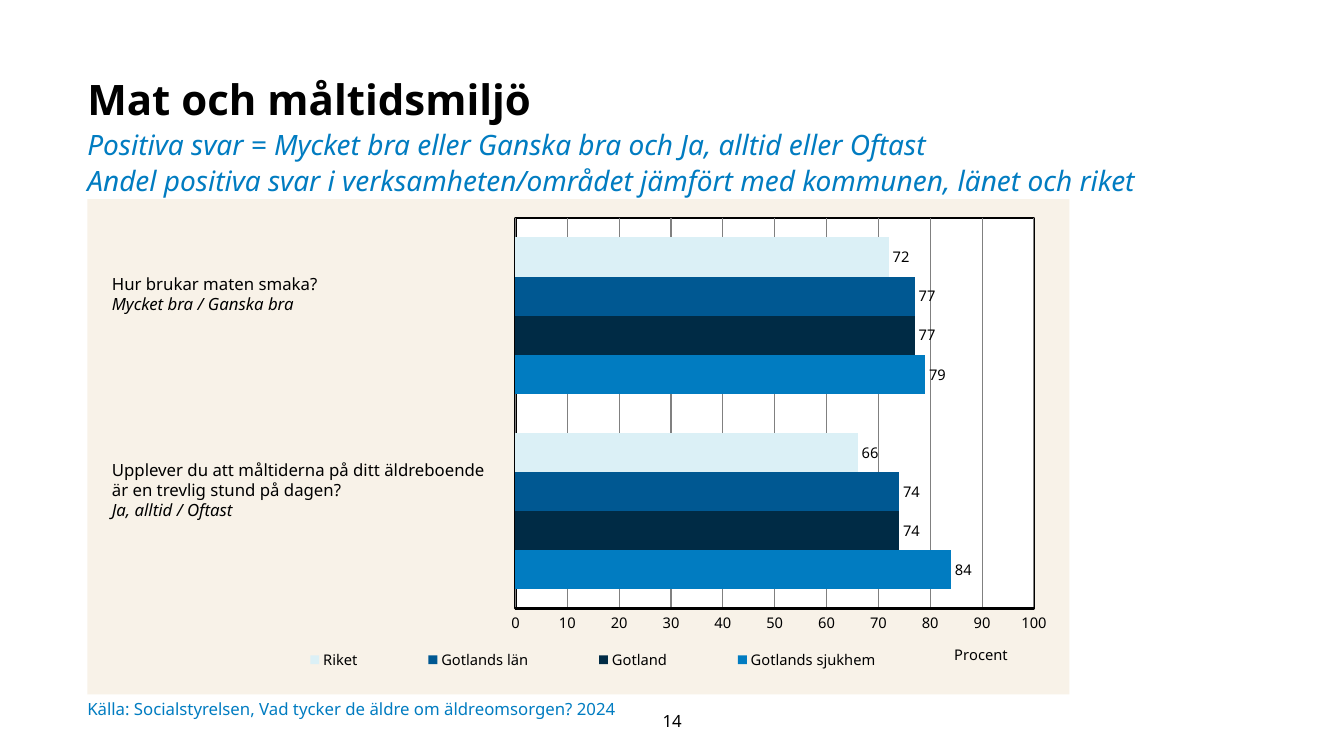
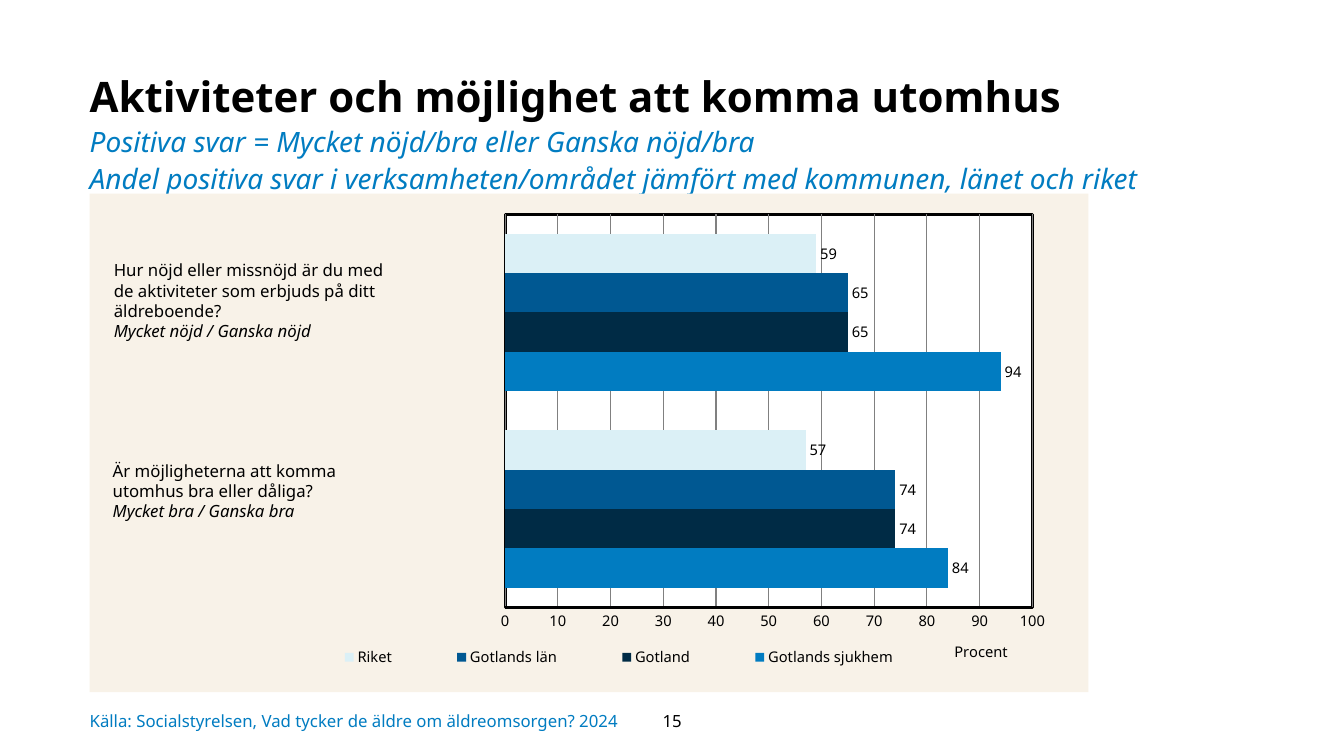
from dataclasses import dataclass

from copy import deepcopy
from lxml.etree import SubElement
from pptx import Presentation
from pptx.chart.axis import ValueAxis
from pptx.chart.chart import Chart
from pptx.chart.data import CategoryChartData
from pptx.dml.color import RGBColor
from pptx.enum.chart import XL_CHART_TYPE, XL_LABEL_POSITION, XL_LEGEND_POSITION, XL_TICK_MARK
from pptx.enum.text import MSO_ANCHOR, MSO_AUTO_SIZE, PP_ALIGN
from pptx.oxml import parse_xml
from pptx.oxml.ns import nsdecls, qn
from pptx.oxml.xmlchemy import BaseOxmlElement
from pptx.presentation import Presentation as Deck
from pptx.slide import Slide
from pptx.text.text import TextFrame, _Paragraph as Paragraph
from pptx.util import Cm, Pt

FONT = "Noto Sans"
BLACK = RGBColor(0x00, 0x00, 0x00)
WHITE = RGBColor(0xFF, 0xFF, 0xFF)
GREY = RGBColor(0x80, 0x80, 0x80)
CREAM = RGBColor(0xF8, 0xF2, 0xE8)
BLUE = RGBColor(0x01, 0x7C, 0xC1)
NAVY = RGBColor(0x00, 0x2B, 0x45)
ROYAL = RGBColor(0x00, 0x58, 0x92)
ICE = RGBColor(0xDB, 0xF0, 0xF6)

SERIES_COLORS = {"Gotlands sjukhem": BLUE, "Gotland": NAVY, "Gotlands län": ROYAL, "Riket": ICE}
COMPARISON = "Andel positiva svar i verksamheten/området jämfört med kommunen, länet och riket"
SOURCE = "Källa: Socialstyrelsen, Vad tycker de äldre om äldreomsorgen? 2024"


@dataclass(frozen=True)
class Box:
    left: float
    top: float
    width: float
    height: float

    def lengths(self) -> tuple[Cm, Cm, Cm, Cm]:
        return Cm(self.left), Cm(self.top), Cm(self.width), Cm(self.height)


@dataclass(frozen=True)
class Question:
    box: Box
    lines: tuple[str, ...]
    answers: str


@dataclass(frozen=True)
class SurveySlide:
    number: int
    title: str
    definition: str
    title_box: Box
    chart_box: Box
    source_box: Box
    plot_layout: Box
    legend_layout: Box
    axis_title_left: float
    values: tuple[tuple[int, int], ...]
    questions: tuple[Question, ...]


SURVEY_SLIDES = (
    SurveySlide(
        number=14,
        title="Mat och måltidsmiljö",
        definition="Positiva svar = Mycket bra eller Ganska bra och Ja, alltid eller Oftast",
        title_box=Box(2.2, 1.72, 27.25, 1.24),
        chart_box=Box(2.2, 5.02, 24.75, 12.48),
        source_box=Box(2.2, 17.5, 22.83, 0.74),
        plot_layout=Box(0.436, 0.038, 0.528, 0.789),
        legend_layout=Box(0.16, 0.9, 0.71, 0.06),
        axis_title_left=0.88,
        values=((84, 79), (74, 77), (74, 77), (66, 72)),
        questions=(
            Question(Box(2.57, 6.78, 6.5, 1.72), ("Hur brukar maten smaka?",),
                     "Mycket bra / Ganska bra"),
            Question(Box(2.57, 11.46, 11.35, 2.24),
                     ("Upplever du att måltiderna på ditt äldreboende",
                      "är en trevlig stund på dagen?"),
                     "Ja, alltid / Oftast"),
        ),
    ),
    SurveySlide(
        number=15,
        title="Aktiviteter och möjlighet att komma utomhus",
        definition="Positiva svar = Mycket nöjd/bra eller Ganska nöjd/bra",
        title_box=Box(2.26, 1.65, 26.92, 3.23),
        chart_box=Box(2.26, 4.88, 25.17, 12.56),
        source_box=Box(2.26, 17.65, 22.78, 1.02),
        plot_layout=Box(0.416, 0.041, 0.528, 0.789),
        legend_layout=Box(0.195, 0.9, 0.67, 0.06),
        axis_title_left=0.863,
        values=((84, 94), (74, 65), (74, 65), (57, 59)),
        questions=(
            Question(Box(2.62, 6.43, 7.62, 2.76),
                     ("Hur nöjd eller missnöjd är du med de aktiviteter som erbjuds "
                      "på ditt äldreboende?",),
                     "Mycket nöjd / Ganska nöjd"),
            Question(Box(2.59, 11.48, 7.65, 2.24),
                     ("Är möjligheterna att komma utomhus bra eller dåliga?",),
                     "Mycket bra / Ganska bra"),
        ),
    ),
)


def write(paragraph: Paragraph, text: str, *, size: float = 12, color: RGBColor = BLACK,
          bold: bool = False, italic: bool = False) -> None:
    run = paragraph.add_run()
    run.text = text
    font = run.font
    font.name, font.size, font.bold, font.italic = FONT, Pt(size), bold, italic
    font.color.rgb = color


def break_line(paragraph: Paragraph) -> None:
    properties = paragraph.runs[-1]._r.get_or_add_rPr()
    paragraph._p.add_br().append(deepcopy(properties))


def clear_margins(frame: TextFrame) -> None:
    frame.margin_left = frame.margin_top = frame.margin_right = frame.margin_bottom = 0


def add_text_frame(slide: Slide, box: Box, anchor: MSO_ANCHOR = MSO_ANCHOR.TOP) -> TextFrame:
    frame = slide.shapes.add_textbox(*box.lengths()).text_frame
    frame.word_wrap = True
    frame.vertical_anchor = anchor
    return frame


def add_title(slide: Slide, survey: SurveySlide) -> None:
    shape = slide.shapes.title
    shape.left, shape.top, shape.width, shape.height = survey.title_box.lengths()
    frame = shape.text_frame
    clear_margins(frame)
    frame.margin_right, frame.margin_bottom = Cm(0.25), Cm(0.13)
    frame.word_wrap = True
    frame.auto_size = MSO_AUTO_SIZE.NONE
    frame.vertical_anchor = MSO_ANCHOR.TOP
    paragraph = frame.paragraphs[0]
    paragraph.alignment = PP_ALIGN.LEFT
    paragraph.line_spacing = 1.1
    write(paragraph, survey.title, size=30, bold=True)
    for line in (survey.definition, COMPARISON):
        break_line(paragraph)
        write(paragraph, line, size=20, color=BLUE, italic=True)


def add_question(slide: Slide, question: Question) -> None:
    frame = add_text_frame(slide, question.box)
    frame.auto_size = MSO_AUTO_SIZE.SHAPE_TO_FIT_TEXT
    for index, line in enumerate(question.lines):
        write(frame.add_paragraph() if index else frame.paragraphs[0], line)
    write(frame.add_paragraph(), question.answers, italic=True)


def set_layout(parent: BaseOxmlElement, position: int, *, inner: bool = False,
               **fractions: float) -> None:
    for old_layout in parent.findall(qn("c:layout")):
        parent.remove(old_layout)
    layout = parse_xml(f'<c:layout {nsdecls("c")}><c:manualLayout/></c:layout>')
    settings = {"layoutTarget": "inner"} if inner else {}
    settings |= {"xMode": "edge", "yMode": "edge"}
    settings |= {name: str(value) for name, value in fractions.items()}
    for name, value in settings.items():
        SubElement(layout[0], qn(f"c:{name}")).set("val", value)
    parent.insert(position, layout)


def area_format(fill: RGBColor, line: RGBColor | None = None) -> BaseOxmlElement:
    def solid(color: RGBColor) -> str:
        return f'<a:solidFill><a:srgbClr val="{color}"/></a:solidFill>'

    outline = f'<a:ln w="{Pt(2)}">{solid(line)}</a:ln>' if line else "<a:ln><a:noFill/></a:ln>"
    return parse_xml(f'<c:spPr {nsdecls("c", "a")}>{solid(fill)}{outline}</c:spPr>')


def format_value_axis(axis: ValueAxis, title_left: float) -> None:
    axis.minimum_scale, axis.maximum_scale, axis.major_unit = 0, 100, 10
    axis.major_tick_mark = axis.minor_tick_mark = XL_TICK_MARK.NONE
    axis.format.line.color.rgb = BLACK
    axis.format.line.width = Pt(2)
    axis.has_major_gridlines = True
    axis.major_gridlines.format.line.color.rgb = GREY
    axis.major_gridlines.format.line.width = Pt(0.75)
    axis.has_title = True
    write(axis.axis_title.text_frame.paragraphs[0], "Procent", size=10.5)
    set_layout(axis.axis_title._element, 1, x=title_left, y=0.89)


def format_areas(chart: Chart, survey: SurveySlide) -> None:
    chart_element = chart._chartSpace.chart
    chart_element.addnext(area_format(CREAM))
    plot_area = chart_element.plotArea
    plot_area.append(area_format(WHITE, BLACK))
    plot, legend = survey.plot_layout, survey.legend_layout
    set_layout(plot_area, 0, inner=True, x=plot.left, y=plot.top, w=plot.width, h=plot.height)
    set_layout(chart.legend._element, 1, x=legend.left, y=legend.top,
               w=legend.width, h=legend.height)


def add_survey_chart(slide: Slide, survey: SurveySlide) -> None:
    data = CategoryChartData()
    data.categories = ("1", "2")
    for name, values in zip(SERIES_COLORS, survey.values):
        data.add_series(name, values)
    chart = slide.shapes.add_chart(
        XL_CHART_TYPE.BAR_CLUSTERED, *survey.chart_box.lengths(), data).chart
    chart.font.name, chart.font.size = FONT, Pt(10.5)
    chart.font.color.rgb = BLACK
    chart.has_title = False
    chart.has_legend = True
    chart.legend.position = XL_LEGEND_POSITION.BOTTOM
    chart.legend.include_in_layout = False
    chart.legend.font.name, chart.legend.font.size = FONT, Pt(10.5)
    chart.category_axis.visible = False
    format_value_axis(chart.value_axis, survey.axis_title_left)
    plot = chart.plots[0]
    plot.gap_width, plot.overlap, plot.vary_by_categories = 100, 0, False
    for series, color in zip(plot.series, SERIES_COLORS.values()):
        series.format.fill.solid()
        series.format.fill.fore_color.rgb = color
        series.data_labels.show_value = True
        series.data_labels.position = XL_LABEL_POSITION.OUTSIDE_END
    format_areas(chart, survey)


def add_footer(slide: Slide, survey: SurveySlide) -> None:
    source = add_text_frame(slide, survey.source_box, MSO_ANCHOR.MIDDLE)
    clear_margins(source)
    write(source.paragraphs[0], SOURCE, color=BLUE)
    number = add_text_frame(slide, Box(15.64, 17.65, 2.6, 1.02), MSO_ANCHOR.MIDDLE)
    number.paragraphs[0].alignment = PP_ALIGN.CENTER
    write(number.paragraphs[0], str(survey.number))


def add_survey_slide(presentation: Deck, survey: SurveySlide) -> None:
    slide = presentation.slides.add_slide(presentation.slide_layouts.get_by_name("Title Only"))
    add_title(slide, survey)
    add_survey_chart(slide, survey)
    for question in survey.questions:
        add_question(slide, question)
    add_footer(slide, survey)


def main() -> None:
    presentation = Presentation()
    presentation.slide_width, presentation.slide_height = Cm(33.87), Cm(19.05)
    for survey in SURVEY_SLIDES:
        add_survey_slide(presentation, survey)
    presentation.save("out.pptx")


if __name__ == "__main__":
    main()
